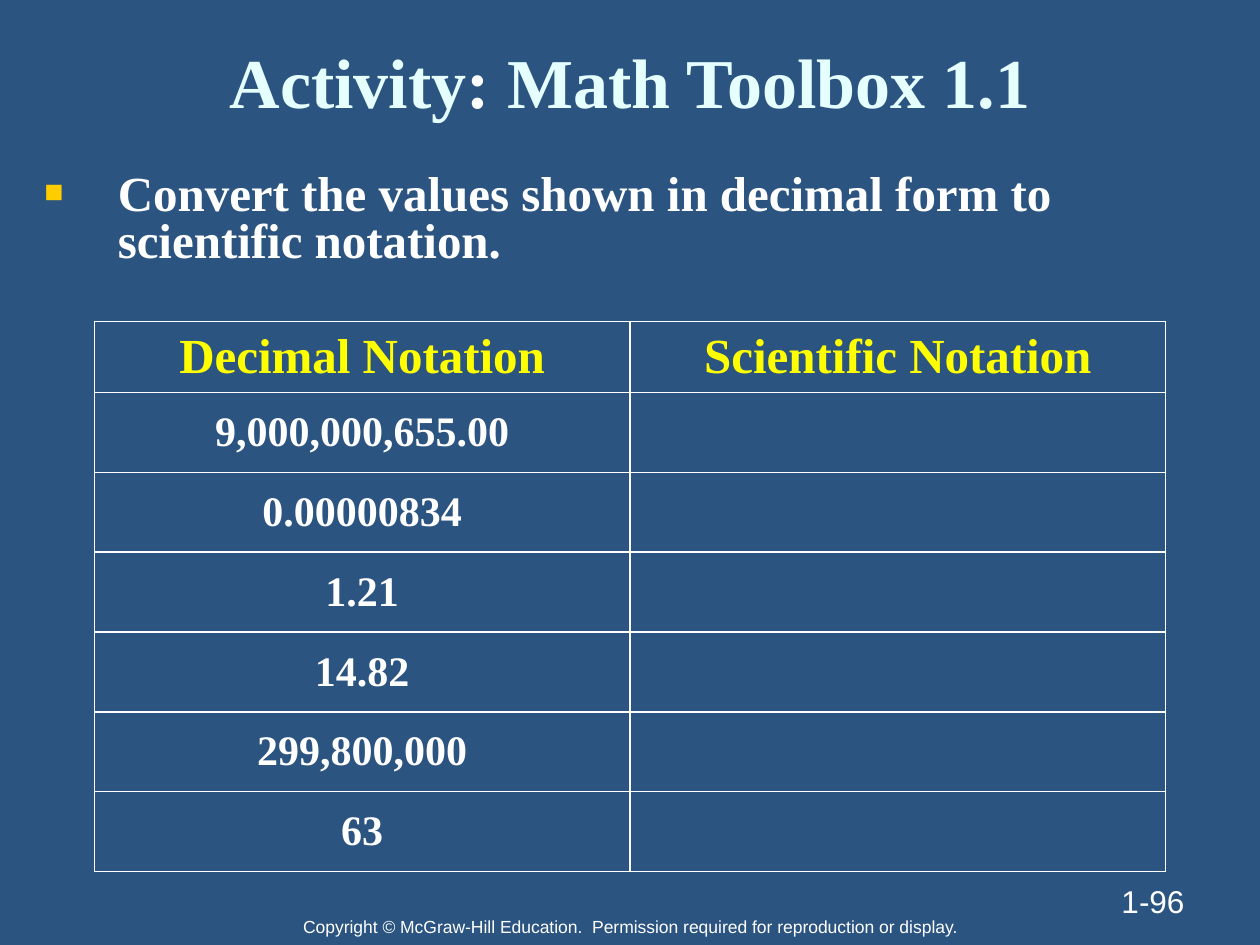
from dataclasses import dataclass

from lxml import etree
from pptx import Presentation
from pptx import util as u
from pptx.dml.color import RGBColor
from pptx.enum import text
from pptx.oxml import ns

Cm, Pt = u.Cm, u.Pt
PP, MSO = text.PP_ALIGN, text.MSO_ANCHOR


@dataclass(frozen=True)
class Theme:
    serif: str = "Times New Roman"
    sans: str = "Arial"
    back: str = "2B5481"
    white: str = "FFFFFF"
    title: str = "E5FFFF"
    header: str = "FFFF00"
    bullet: str = "FFCC00"
    title_size: int = 40
    head_size: int = 28
    cell_size: int = 24
    number_size: int = 18
    footer_size: int = 10


def sub(parent, tag, **attrs):
    return etree.SubElement(parent, ns.qn(tag), attrs)


class Deck:
    """Holds the style and the current slide."""

    def __init__(self, theme):
        self.t = theme
        self.prs = Presentation()
        self.prs.slide_width, self.prs.slide_height = Cm(25.4), Cm(19.05)
        self.s = self.prs.slides.add_slide(self.prs.slide_layouts[1])
        fill = self.s.background.fill
        fill.solid()
        fill.fore_color.rgb = RGBColor.from_string(theme.back)

    def place(self, sp, box):
        for name, value in zip(("left", "top", "width", "height"), box):
            setattr(sp, name, Cm(value))

    def frame(self, sp, anchor):
        tf = sp.text_frame
        fmt = {"word_wrap": True, "auto_size": text.MSO_AUTO_SIZE.NONE,
               "vertical_anchor": anchor}
        for name, value in fmt.items():
            setattr(tf, name, value)
        return tf

    def run(self, p, words, size, color, font, bold=False):
        r = p.add_run()
        r.text = words
        for name, value in {"size": Pt(size), "name": font, "bold": bold}.items():
            setattr(r.font, name, value)
        r.font.color.rgb = RGBColor.from_string(color)

    def title(self, parts, box):
        sp = self.s.shapes.title
        self.place(sp, box)
        p = self.frame(sp, MSO.MIDDLE).paragraphs[0]
        p.alignment = PP.CENTER
        for words, color in parts:
            self.run(p, words, self.t.title_size, color, self.t.serif, True)

    def bullets(self, items, box):
        sp = self.s.placeholders[1]
        self.place(sp, box)
        tf = self.frame(sp, MSO.TOP)
        for i, words in enumerate(items):
            p = tf.paragraphs[0] if i == 0 else tf.add_paragraph()
            pPr = p._p.get_or_add_pPr()
            pPr.set("marL", str(Cm(1.48)))
            pPr.set("indent", str(-Cm(1.48)))
            sub(sub(pPr, "a:buClr"), "a:srgbClr", val=self.t.bullet)
            sub(pPr, "a:buSzPct", val="65000")
            sub(pPr, "a:buFont", typeface=self.t.sans)
            sub(pPr, "a:buChar", char="■")
            p.line_spacing, p.space_before = 0.8, Pt(0)
            self.run(p, words, self.t.head_size, self.t.white, self.t.serif, True)

    def label(self, words, box, size, align, anchor):
        sp = self.s.shapes.add_textbox(*map(Cm, box))
        p = self.frame(sp, anchor).paragraphs[0]
        p.alignment = align
        self.run(p, words, size, self.t.white, self.t.sans)

    def borders(self, cell):
        tcPr = cell._tc.get_or_add_tcPr()
        for i, side in enumerate(("a:lnL", "a:lnR", "a:lnT", "a:lnB")):
            ln = etree.Element(ns.qn(side), w=str(Pt(1)))
            sub(sub(ln, "a:solidFill"), "a:srgbClr", val=self.t.white)
            tcPr.insert(i, ln)

    def table(self, rows, box, head_height, row_height):
        tbl = self.s.shapes.add_table(len(rows), len(rows[0]), *map(Cm, box)).table
        tbl.first_row = tbl.horz_banding = False
        for i, row in enumerate(rows):
            tbl.rows[i].height = Cm(row_height if i else head_height)
            size, color = ((self.t.cell_size, self.t.white) if i
                           else (self.t.head_size, self.t.header))
            for j, words in enumerate(row):
                cell = tbl.cell(i, j)
                cell.vertical_anchor = MSO.MIDDLE
                cell.fill.background()
                self.borders(cell)
                if words:
                    p = cell.text_frame.paragraphs[0]
                    p.alignment = PP.CENTER
                    self.run(p, words, size, color, self.t.serif, True)


def main():
    t = Theme()
    d = Deck(t)

    # Footer and slide number
    d.label("Copyright © McGraw-Hill Education.  Permission required for "
            "reproduction or display.", (0, 18.34, 25.4, 0.71),
            t.footer_size, PP.CENTER, MSO.TOP)
    d.label("1-96", (18.2, 17.36, 5.93, 1.31), t.number_size, PP.RIGHT, MSO.BOTTOM)

    # Title and task
    d.title([("Activity", t.title), (":", t.white), (" Math Toolbox 1.1", t.title)],
            (0, 0.64, 25.4, 1.98))
    d.bullets(["Convert the values shown in decimal form to scientific notation."],
              (0.64, 3.38, 23.28, 2.54))

    # Conversion table, right column left for the answers
    values = ["9,000,000,655.00", "0.00000834", "1.21", "14.82", "299,800,000", "63"]
    rows = [("Decimal Notation", "Scientific Notation")] + [(v, "") for v in values]
    d.table(rows, (1.9, 6.48, 21.6, 11.1), 1.43, 1.61)

    d.prs.save("out.pptx")


if __name__ == "__main__":
    main()
